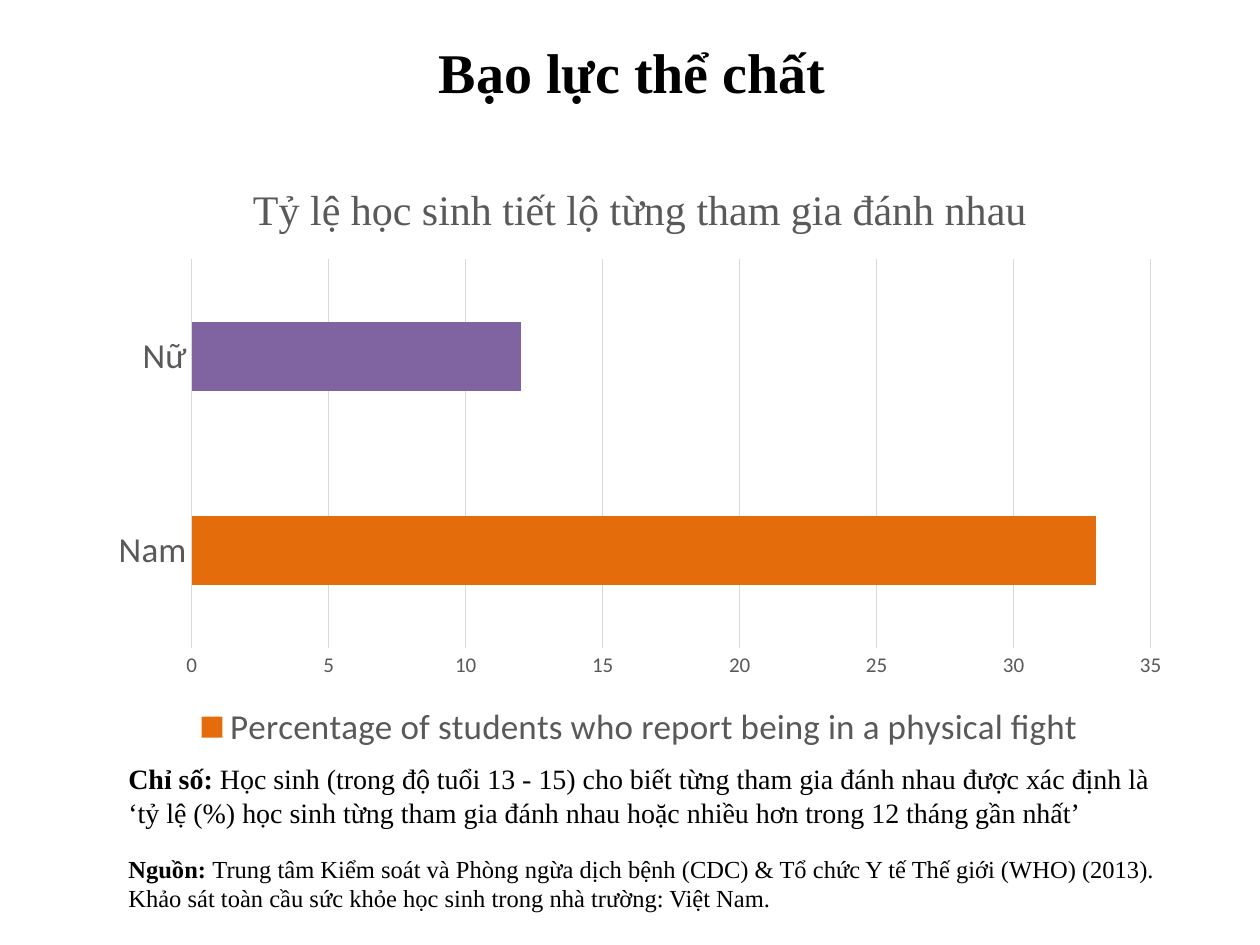
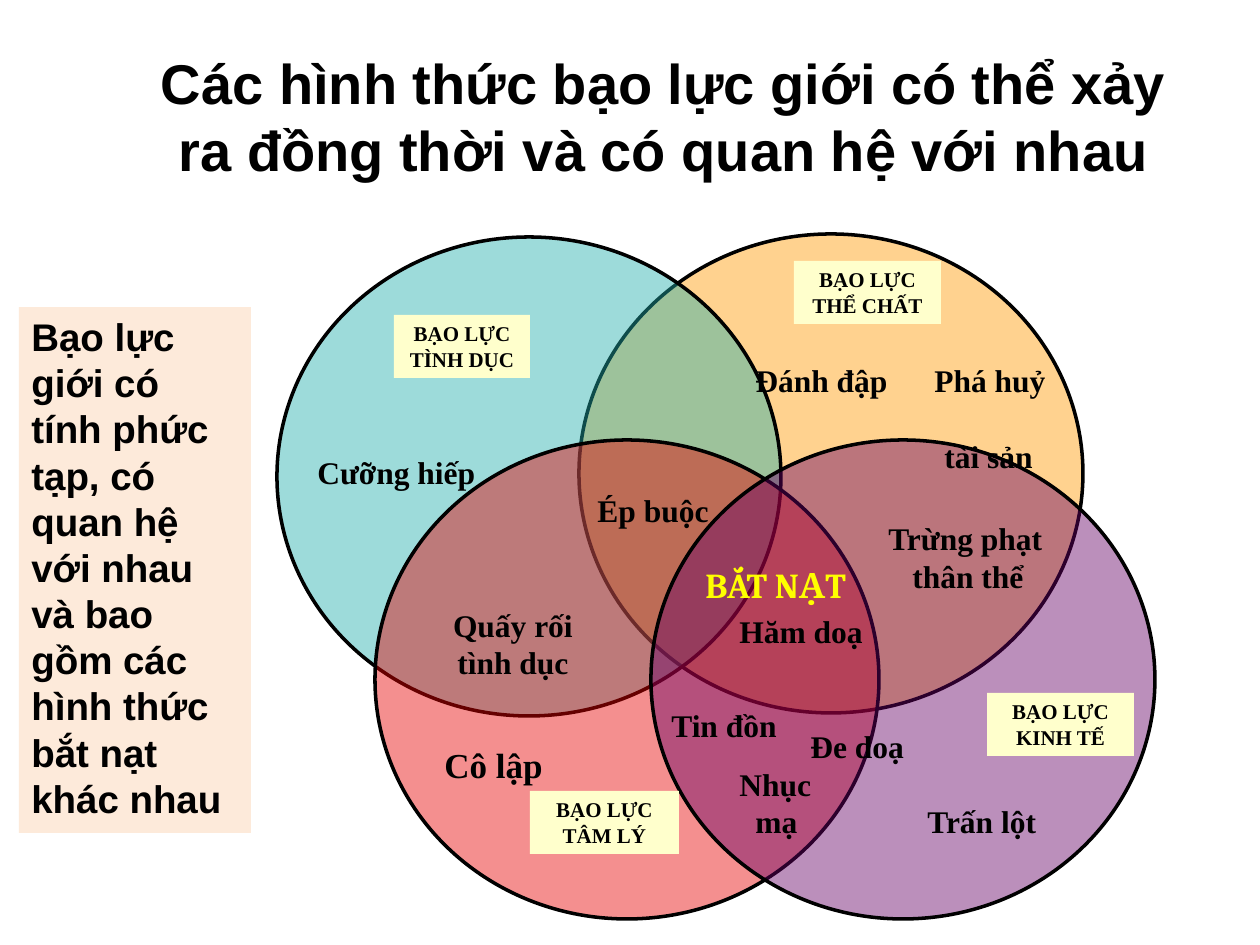
import dataclasses
import typing

import lxml.etree
import pptx
import pptx.chart.data
import pptx.dml.color
import pptx.enum.chart
import pptx.enum.shapes
import pptx.enum.text
import pptx.oxml.ns
import pptx.util

EMU_PER_PX = 914400 / 126
INK, GREY, GRID = "000000", "595959", "D9D9D9"
ORANGE, VIOLET = "E46C0A", "8064A2"
TAG_FILL, PANEL_FILL, YELLOW = "FFFFCC", "FDEADA", "FFFF00"
SERIF, SANS, CHART_FONT = "Times New Roman", "Arial", "Calibri"
LEFT = pptx.enum.text.PP_ALIGN.LEFT
CENTER = pptx.enum.text.PP_ALIGN.CENTER
RIGHT = pptx.enum.text.PP_ALIGN.RIGHT
CIRCLE_SIZE = (504, 479)


class Box(typing.NamedTuple):
    left: int
    top: int
    width: int
    height: int


class Run(typing.NamedTuple):
    text: str
    bold: bool = True


@dataclasses.dataclass(frozen=True)
class Para:
    """A paragraph; before is in points, indent and tabs are in px."""
    runs: tuple[Run, ...]
    size: int = 18
    align: typing.Any = LEFT
    before: int = 0
    indent: int = 0
    tabs: tuple[int, ...] = ()
    font: str = SERIF
    color: str = INK


@dataclasses.dataclass(frozen=True)
class Label:
    box: Box
    paras: tuple[Para, ...]
    margin_top: int = 6
    anchor: typing.Any = pptx.enum.text.MSO_ANCHOR.TOP
    wrap: bool = True


class Circle(typing.NamedTuple):
    left: int
    top: int
    color: str


class Tag(typing.NamedTuple):
    box: Box
    text: str


def line(text: str, **style: typing.Any) -> Para:
    return Para((Run(text),), **style)


def px(length: float) -> int:
    return round(length * EMU_PER_PX)


def rgb(color: str) -> pptx.dml.color.RGBColor:
    return pptx.dml.color.RGBColor.from_string(color)


def assign(target: typing.Any, values: dict[str, typing.Any]) -> None:
    for name, value in values.items():
        setattr(target, name, value)


def style_font(font: typing.Any, name: str, size: int, color: str, bold: bool = False) -> None:
    assign(font, {"name": name, "size": pptx.util.Pt(size), "bold": bold})
    font.color.rgb = rgb(color)


def set_indent_and_tabs(paragraph: typing.Any, para: Para) -> None:
    properties = paragraph._p.get_or_add_pPr()
    if para.indent:
        properties.set("marL", str(px(para.indent)))
        properties.set("indent", "0")
    if para.tabs:
        stops = lxml.etree.SubElement(properties, pptx.oxml.ns.qn("a:tabLst"))
        for position in para.tabs:
            lxml.etree.SubElement(stops, pptx.oxml.ns.qn("a:tab"), pos=str(px(position)), algn="l")


def write(shape: typing.Any, label: Label) -> None:
    frame = shape.text_frame
    assign(frame, {"word_wrap": label.wrap, "vertical_anchor": label.anchor,
                   "margin_top": px(label.margin_top)})
    for index, para in enumerate(label.paras):
        paragraph = frame.add_paragraph() if index else frame.paragraphs[0]
        paragraph.alignment = para.align
        if para.before:
            paragraph.space_before = pptx.util.Pt(para.before)
        set_indent_and_tabs(paragraph, para)
        for part in para.runs:
            run = paragraph.add_run()
            run.text = part.text
            style_font(run.font, para.font, para.size, para.color, part.bold)


def add_label(slide: typing.Any, label: Label) -> None:
    write(slide.shapes.add_textbox(*map(px, label.box)), label)


def add_title(slide: typing.Any, box: Box, text: str, font: str) -> None:
    add_label(slide, Label(box, (line(text, size=32, align=CENTER, font=font),),
                           anchor=pptx.enum.text.MSO_ANCHOR.MIDDLE))


def add_filled(slide: typing.Any, kind: typing.Any, box: Box, color: str) -> typing.Any:
    shape = slide.shapes.add_shape(kind, *map(px, box))
    shape.shadow.inherit = False
    shape.fill.solid()
    shape.fill.fore_color.rgb = rgb(color)
    shape.line.fill.background()
    return shape


def add_panel(slide: typing.Any, label: Label, color: str) -> None:
    write(add_filled(slide, pptx.enum.shapes.MSO_SHAPE.RECTANGLE, label.box, color), label)


def add_circle(slide: typing.Any, circle: Circle) -> None:
    box = Box(circle.left, circle.top, *CIRCLE_SIZE)
    shape = add_filled(slide, pptx.enum.shapes.MSO_SHAPE.OVAL, box, circle.color)
    fill_color = shape._element.spPr.find(".//" + pptx.oxml.ns.qn("a:srgbClr"))
    lxml.etree.SubElement(fill_color, pptx.oxml.ns.qn("a:alpha"), val="44000")
    shape.line.color.rgb = rgb(INK)
    shape.line.width = pptx.util.Pt(2)


def add_fight_chart(slide: typing.Any, box: Box) -> None:
    figures = pptx.chart.data.CategoryChartData()
    figures.categories = ["Nam", "Nữ"]
    figures.add_series("Percentage of students who report being in a physical fight", (33, 12))
    chart = slide.shapes.add_chart(
        pptx.enum.chart.XL_CHART_TYPE.BAR_CLUSTERED, *map(px, box), figures).chart
    style_font(chart.font, CHART_FONT, 10, INK)

    heading = chart.chart_title.text_frame.paragraphs[0].add_run()
    heading.text = "Tỷ lệ học sinh tiết lộ từng tham gia đánh nhau"
    style_font(heading.font, SERIF, 24, GREY)
    chart.chart_title.include_in_layout = False

    chart.has_legend = True
    assign(chart.legend, {"position": pptx.enum.chart.XL_LEGEND_POSITION.BOTTOM,
                          "include_in_layout": False})
    style_font(chart.legend.font, CHART_FONT, 20, GREY)

    sexes, percents = chart.category_axis, chart.value_axis
    no_tick = pptx.enum.chart.XL_TICK_MARK.NONE
    for axis, size in ((sexes, 20), (percents, 12)):
        assign(axis, {"major_tick_mark": no_tick, "minor_tick_mark": no_tick})
        style_font(axis.tick_labels.font, CHART_FONT, size, GREY)
    assign(percents, {"minimum_scale": 0, "maximum_scale": 35, "major_unit": 5,
                      "has_major_gridlines": True})
    percents.format.line.fill.background()
    for rule in (sexes.format.line, percents.major_gridlines.format.line):
        rule.color.rgb = rgb(GRID)
        rule.width = pptx.util.Pt(0.75)

    plot = chart.plots[0]
    assign(plot, {"gap_width": 182, "vary_by_categories": False})
    fights = plot.series[0]
    for bar, color in ((fights, ORANGE), (fights.points[1], VIOLET)):
        bar.format.fill.solid()
        bar.format.fill.fore_color.rgb = rgb(color)


FIGHT_NOTES = Label(Box(116, 756, 1067, 190), (
    Para((Run("Chỉ số: "),
          Run("Học sinh (trong độ tuổi 13 - 15) cho biết từng tham gia đánh nhau được xác định là "
              "‘tỷ lệ (%) học sinh từng tham gia đánh nhau hoặc nhiều hơn trong 12 tháng gần nhất’",
              False)), size=16),
    Para((Run("Nguồn: "),
          Run("Trung tâm Kiểm soát và Phòng ngừa dịch bệnh (CDC) & Tổ chức Y tế Thế giới (WHO) "
              "(2013). Khảo sát toàn cầu sức khỏe học sinh trong nhà trường: Việt Nam.",
              False)), size=14, before=14),
))

CIRCLES = (
    Circle(579, 234, "FF9900"),
    Circle(277, 237, "21AFAC"),
    Circle(375, 440, "E60000"),
    Circle(651, 440, "660066"),
)

TAGS = (
    Tag(Box(394, 315, 136, 63), "BẠO LỰC TÌNH DỤC"),
    Tag(Box(794, 261, 147, 63), "BẠO LỰC THỂ CHẤT"),
    Tag(Box(987, 693, 147, 63), "BẠO LỰC KINH TẾ"),
    Tag(Box(530, 791, 149, 63), "BẠO LỰC TÂM LÝ"),
)

SEXUAL_ACTS = Label(Box(305, 417, 416, 339), (
    line("Cưỡng hiếp"),
    line("Ép buộc", align=RIGHT),
    line("Quấy rối", align=CENTER, before=44),
    line("tình dục", align=CENTER),
), margin_top=36)

PHYSICAL_ACTS = Label(Box(743, 325, 340, 305), (
    line("Đánh đập\tPhá huỷ", tabs=(179,)),
    line("tài sản", before=22, indent=189),
    line("Trừng phạt", before=25, indent=133),
    line("thân thể", indent=157),
), margin_top=36)

BULLYING = Label(Box(693, 557, 168, 55),
                 (line("BẮT NẠT", size=20, font="Cambria", color=YELLOW),), wrap=False)

ECONOMIC_ACTS = Label(Box(727, 604, 334, 242), (
    line("Hăm doạ"),
    line("Đe doạ", before=44, indent=71),
    line("Nhục"),
    line("\tmạ\tTrấn lột", tabs=(16, 188)),
), margin_top=8)

PSYCHOLOGICAL_ACTS = Label(Box(432, 698, 357, 183), (
    line("Tin đồn", align=RIGHT),
    line("Cô lập", size=20),
), margin_top=8)

COMPLEXITY = Label(Box(19, 307, 232, 526), (
    line("Bạo lực giới có tính phức tạp, có quan hệ với nhau và bao gồm các hình thức "
         "bắt nạt khác nhau", size=22, font=SANS),))


def build_fight_slide(slide: typing.Any) -> None:
    add_title(slide, Box(235, 25, 795, 92), "Bạo lực thể chất", SERIF)
    add_fight_chart(slide, Box(97, 156, 1086, 600))
    add_label(slide, FIGHT_NOTES)


def build_overlap_slide(slide: typing.Any) -> None:
    add_title(slide, Box(121, 24, 1086, 183),
              "Các hình thức bạo lực giới có thể xảy ra đồng thời và có quan hệ với nhau", SANS)
    for circle in CIRCLES:
        add_circle(slide, circle)
    for tag in TAGS:
        add_panel(slide, Label(tag.box, (line(tag.text, size=12, align=CENTER),)), TAG_FILL)
    for label in (SEXUAL_ACTS, PHYSICAL_ACTS, BULLYING, ECONOMIC_ACTS, PSYCHOLOGICAL_ACTS):
        add_label(slide, label)
    add_panel(slide, COMPLEXITY, PANEL_FILL)


def main() -> None:
    deck = pptx.Presentation()
    assign(deck, {"slide_width": px(1260), "slide_height": px(945)})
    blank = deck.slide_layouts[6]
    for build in (build_fight_slide, build_overlap_slide):
        build(deck.slides.add_slide(blank))
    deck.save("out.pptx")


if __name__ == "__main__":
    main()
